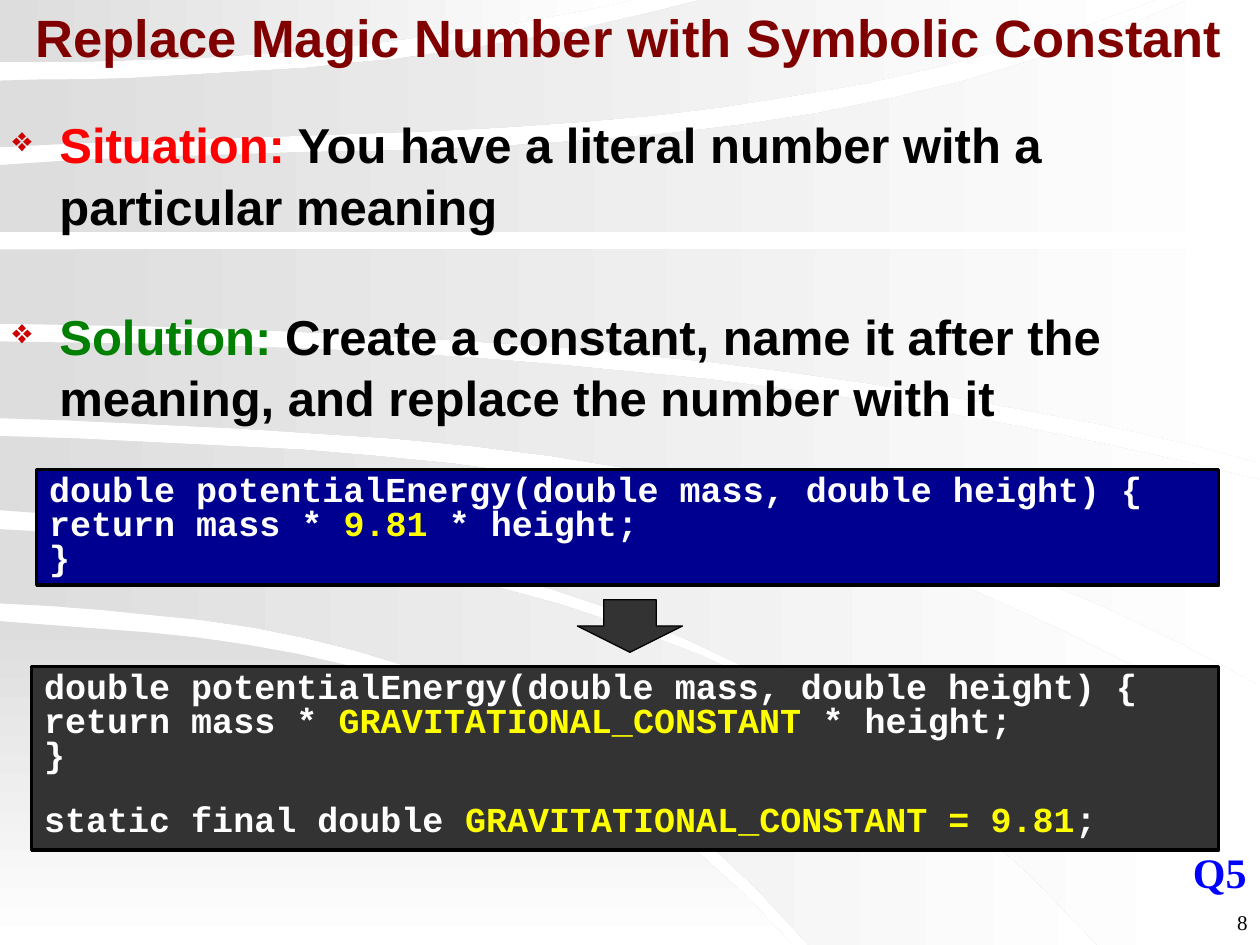
from lxml import etree
from pptx import Presentation
from pptx import util as u
from pptx.dml import color
from pptx.enum import shapes, text
from pptx.oxml import ns

SANS, MONO, SERIF = "Arial", "Courier New", "Times New Roman"
BLACK, WHITE, YELLOW = "000000", "FFFFFF", "FFFF00"
GREY = "333333"

WAVE_UNIT = u.Cm(2.54) / 100
CURVE_STEPS = 16
WAVES = [
    ([(0, 493), (219, 516), (426, 587), (629, 750)], [(0, 750), (629, 750)], []),
    ([(0, 420), (294, 446), (561, 522), (893, 750)],
     [(0, 479), (221, 502), (416, 568), (642, 750)], []),
    ([(0, 346), (328, 365), (664, 430), (958, 563)],
     [(0, 405), (298, 435), (609, 539), (871, 750)], [(958, 750)]),
    ([(0, 271), (399, 286), (714, 322), (1000, 381)],
     [(0, 332), (351, 352), (683, 412), (1000, 544)], []),
    ([(0, 198), (1000, 198)], [(0, 257), (332, 268), (662, 300), (1000, 367)], []),
    ([(0, 131), (372, 117), (734, 72), (943, 0)], [(0, 184), (1000, 184)], [(1000, 0)]),
    ([(0, 64), (197, 57), (383, 37), (556, 0)],
     [(0, 117), (381, 102), (683, 67), (917, 0)], []),
    ([(0, 0), (501, 0)], [(0, 49), (173, 45), (346, 28), (501, 0)], []),
]

TITLE = [("Replace Magic Number with Symbolic Constant", "800000")]
POINTS = [
    (1.5, [("Situation:", "FF0000"),
           (" You have a literal number with a particular meaning", BLACK)]),
    (39, [("Solution:", "008000"),
          (" Create a constant, name it after the meaning, and replace the number with it",
           BLACK)]),
]


def method_lines(number):
    return [
        (0, [("double potentialEnergy(double mass, double height) {", WHITE)]),
        (0, [("return mass * ", WHITE), (number, YELLOW), (" * height;", WHITE)]),
        (0, [("}", WHITE)]),
    ]


CONSTANT = (18, [("static final double ", WHITE),
                 ("GRAVITATIONAL_CONSTANT = 9.81", YELLOW), (";", WHITE)])
CODE_BOXES = [
    ((0.74, 9.47, 23.83, 2.33), "000090", method_lines("9.81")),
    ((0.64, 13.44, 23.93, 3.7), GREY, method_lines("GRAVITATIONAL_CONSTANT") + [CONSTANT]),
]
ARROW = (11.64, 12.09, 2.12, 1.06)


def rgb(value):
    return color.RGBColor.from_string(value)


def cm(values):
    return [u.Cm(v) for v in values]


def height_at(x, knots):
    total = 0
    for i, (xi, yi) in enumerate(knots):
        term = yi
        for j, (xj, _) in enumerate(knots):
            if i != j:
                term *= (x - xj) / (xi - xj)
        total += term
    return total


def curve(knots):
    if len(knots) == 2:
        return knots
    end = knots[-1][0]
    xs = [end * i / CURVE_STEPS for i in range(CURVE_STEPS + 1)]
    return [(x, height_at(x, knots)) for x in xs]


def add_wave(s, upper, lower, corner, angle):
    points = curve(upper) + corner + curve(lower)[::-1]
    builder = s.shapes.build_freeform(*points[0], scale=WAVE_UNIT)
    builder.add_line_segments(points[1:], close=True)
    sp = builder.convert_to_shape()
    sp.shadow.inherit = False
    sp.line.fill.background()
    sp.fill.gradient()
    sp.fill.gradient_angle = angle
    for stop, shade in zip(sp.fill.gradient_stops, ("DDDDDD", WHITE)):
        stop.color.rgb = rgb(shade)


def add_block(s, kind, place, fill, weight):
    sp = s.shapes.add_shape(kind, *cm(place))
    sp.shadow.inherit = False
    sp.fill.solid()
    sp.fill.fore_color.rgb = rgb(fill)
    sp.line.color.rgb = rgb(BLACK)
    sp.line.width = u.Pt(weight)
    return sp


def add_bullet(p):
    pPr = p._p.get_or_add_pPr()
    pPr.set("marL", str(u.Cm(0.95)))
    pPr.set("indent", str(-u.Cm(0.95)))
    clr = etree.SubElement(pPr, ns.qn("a:buClr"))
    etree.SubElement(clr, ns.qn("a:srgbClr"), val="CC0000")
    etree.SubElement(pPr, ns.qn("a:buSzPct"), val="70000")
    etree.SubElement(pPr, ns.qn("a:buChar"), char="❖")


def write(sp, paragraphs, font, size, bold=True, align=text.PP_ALIGN.LEFT,
          anchor=text.MSO_ANCHOR.TOP, spacing=None, wrap=True, bullets=False):
    tf = sp.text_frame
    tf.word_wrap = wrap
    tf.vertical_anchor = anchor
    for i, (before, runs) in enumerate(paragraphs):
        p = tf.add_paragraph() if i else tf.paragraphs[0]
        p.alignment = align
        p.line_spacing = spacing
        p.space_before = u.Pt(before)
        if bullets:
            add_bullet(p)
        for words, shade in runs:
            r = p.add_run()
            r.text = words
            r.font.name = font
            r.font.size = u.Pt(size)
            r.font.bold = bold
            r.font.color.rgb = rgb(shade)


def add_text(s, place, paragraphs, font, size, **style):
    write(s.shapes.add_textbox(*cm(place)), paragraphs, font, size, **style)


def main():
    prs = Presentation()
    prs.slide_width, prs.slide_height = cm((25.4, 19.05))
    s = prs.slides.add_slide(prs.slide_layouts[6])
    for i, wave in enumerate(WAVES):
        add_wave(s, *wave, angle=0 if i else 270)
    add_text(s, (20.12, 18.21, 5.28, 1.06), [(0, [("8", BLACK)])], SERIF, 12,
             bold=False, align=text.PP_ALIGN.RIGHT)
    add_text(s, (0.2, 0, 24.97, 1.48), [(0, TITLE)], SANS, 30,
             align=text.PP_ALIGN.CENTER, anchor=text.MSO_ANCHOR.MIDDLE)
    add_text(s, (0, 2.12, 25.2, 15.67), POINTS, SANS, 28, spacing=1.05, bullets=True)
    for place, fill, lines in CODE_BOXES:
        sp = add_block(s, shapes.MSO_SHAPE.RECTANGLE, place, fill, 2)
        write(sp, lines, MONO, 20, spacing=0.8)
    add_block(s, shapes.MSO_SHAPE.DOWN_ARROW, ARROW, GREY, 0.75)
    add_text(s, (23.8, 16.94, 1.6, 1.27), [(0, [("Q5", "0000FF")])], SERIF, 24, wrap=False)
    prs.save("out.pptx")


if __name__ == "__main__":
    main()
